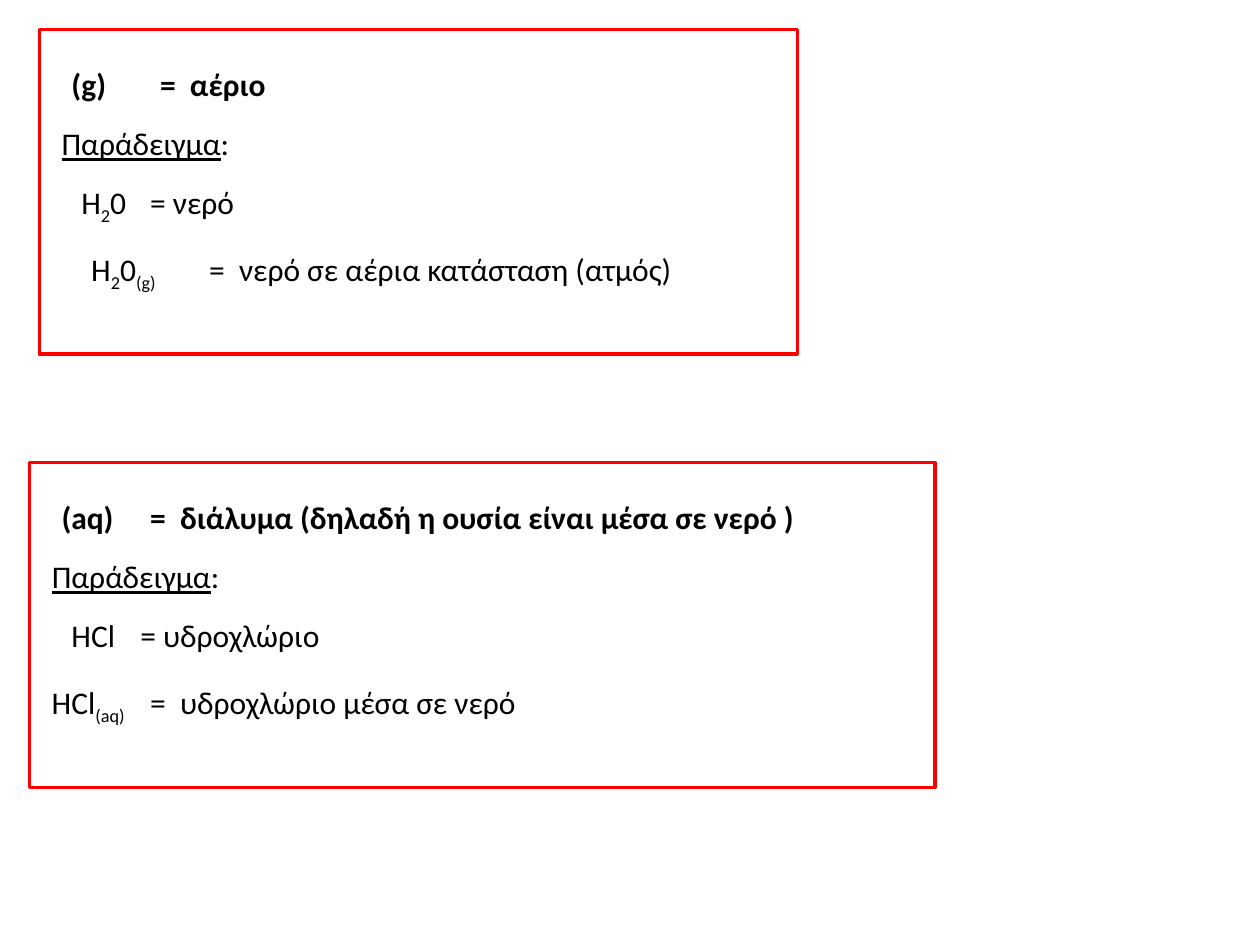
"""Build a slide with two framed cards on the state symbols (g) and (aq)."""
from pptx import Presentation
from pptx.dml.color import RGBColor
from pptx.enum.shapes import MSO_SHAPE
from pptx.util import Inches, Pt

RED = RGBColor(255, 0, 0)
BLACK = RGBColor(0, 0, 0)
COLS, ROWS = 128, 96
HIGH, TALL = 5.1, 9.1
TOPS = (3, 9, 15, 21.8)
FONT = {"name": "Calibri", "size": Pt(18)}
BOLD, LINED, SUB = {"bold": True}, {"underline": True}, {"sub": True}
PLAIN = {}

LABEL = (1, 24, HIGH, [("Παράδειγμα", LINED), (":", PLAIN)])
WATER = [("H", PLAIN), ("2", SUB), ("0", PLAIN)]

# Each card: left, top, width, height, then lines of (column, width, height, runs)
CARDS = [
    (4, 3, 77, 33, [
        [(2, 10, HIGH, [("(g)", BOLD)]), (11, 17, HIGH, [("=  αέριο", BOLD)])],
        [LABEL],
        [(3, 10, HIGH, WATER), (10, 25, HIGH, [("= νερό", PLAIN)])],
        [(4, 12, TALL, WATER + [("(g)", SUB)]),
         (16, 64, HIGH, [("=  νερό σε αέρια κατάσταση (ατμός)", PLAIN)])],
    ]),
    (3, 47, 92, 33, [
        [(2, 10, HIGH, [("(aq)", BOLD)]),
         (11, 82, HIGH, [("=  διάλυμα (δηλαδή η ουσία είναι μέσα σε νερό )", BOLD)])],
        [LABEL],
        [(3, 10, HIGH, [("HCl", PLAIN)]), (10, 25, HIGH, [("= υδροχλώριο", PLAIN)])],
        [(1, 18, TALL, [("HCl", PLAIN), ("(aq)", SUB)]),
         (11, 64, HIGH, [("=  υδροχλώριο μέσα σε νερό", PLAIN)])],
    ]),
]

deck = Presentation()
deck.slide_width, deck.slide_height = Inches(10), Inches(7.5)
slide = deck.slides.add_slide(deck.slide_layouts[6])


def place(left, top, width, height):
    cell_w, cell_h = deck.slide_width / COLS, deck.slide_height / ROWS
    return [int(n) for n in (left * cell_w, top * cell_h, width * cell_w, height * cell_h)]


def write(box, runs):
    frame = slide.shapes.add_textbox(*place(*box)).text_frame
    frame.word_wrap = True
    for text, style in runs:
        run = frame.paragraphs[0].add_run()
        run.text = text
        run.font.color.rgb = BLACK
        for key, value in {**FONT, **style}.items():
            if key == "sub":
                run._r.get_or_add_rPr().set("baseline", "-25000")
            else:
                setattr(run.font, key, value)


def outline(box):
    frame = slide.shapes.add_shape(MSO_SHAPE.RECTANGLE, *place(*box))
    frame.shadow.inherit = False
    frame.fill.background()
    frame.line.color.rgb = RED
    frame.line.width = Pt(2)


for left, top, width, height, lines in CARDS:
    for row, parts in zip(TOPS, lines):
        for col, wide, high, runs in parts:
            write((left + col, top + row, wide, high), runs)
    outline((left, top, width, height))

deck.save("out.pptx")
